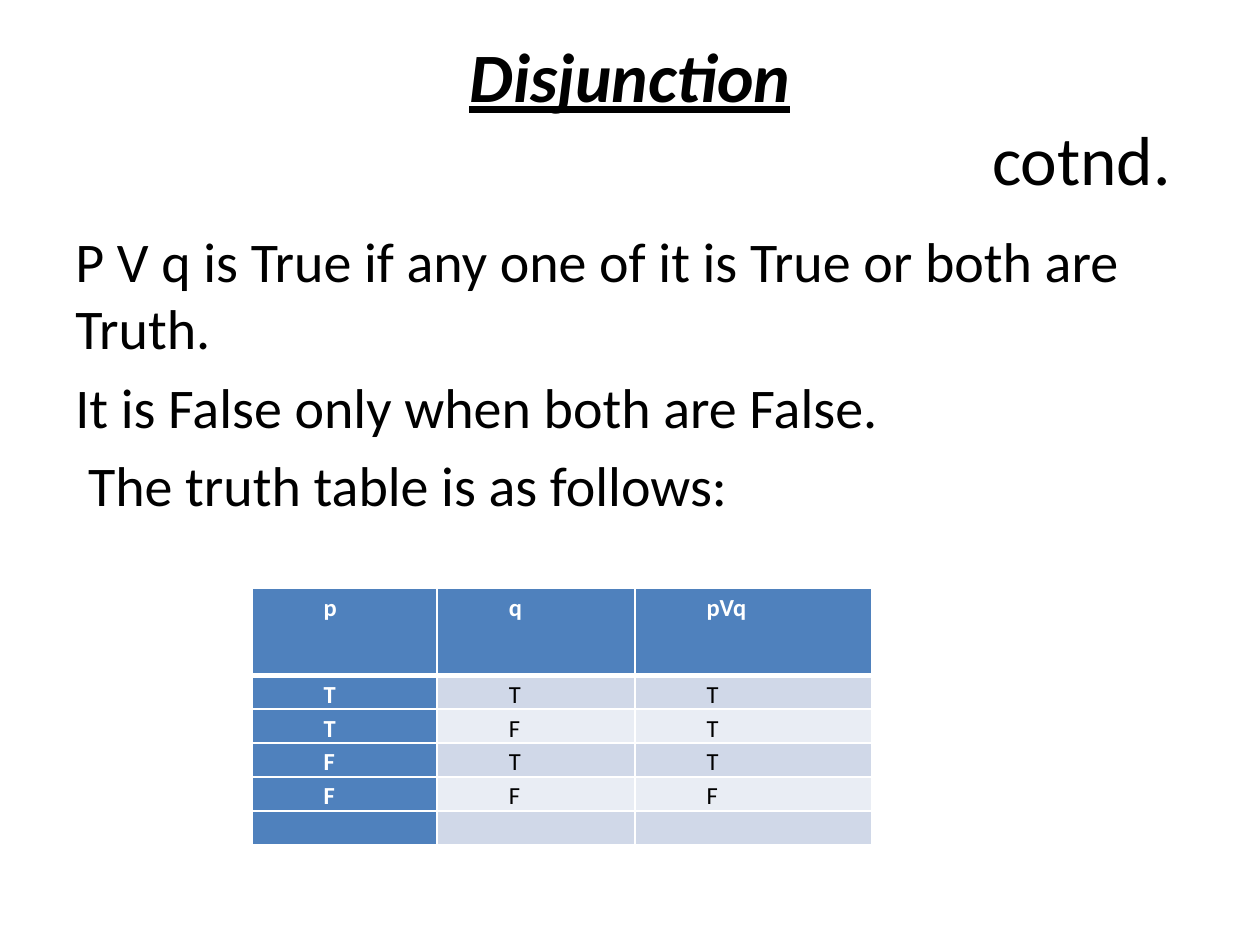
from lxml import etree
from pptx import Presentation
from pptx.dml.color import RGBColor
from pptx.enum.text import MSO_ANCHOR, PP_ALIGN
from pptx.oxml.ns import qn
from pptx.util import Pt

CENTER = PP_ALIGN.CENTER
LEFT = PP_ALIGN.LEFT
TOP = MSO_ANCHOR.TOP
MIDDLE = MSO_ANCHOR.MIDDLE

COLORS = {
    "text": "000000",
    "white": "FFFFFF",
    "header": "4F81BD",
    "odd_band": "D0D8E8",
    "even_band": "E9EDF4",
}
TRUTH_TABLE = [
    ["p", "q", "pVq"],
    ["T", "T", "T"],
    ["T", "F", "T"],
    ["F", "T", "T"],
    ["F", "F", "F"],
    ["", "", ""],
]
STATEMENTS = [
    "P V q is True if any one of it is True or both are Truth.",
    "It is False only when both are False.",
    " The truth table is as follows:",
]


def color(name):
    return RGBColor.from_string(COLORS[name])


def indent(paragraph, left):
    paragraph._p.get_or_add_pPr().set("marL", str(Pt(left)))


class SlideBuilder:
    font_name = "Calibri"
    table_size = 14

    def __init__(self, slide):
        self.slide = slide

    def style(self, font, size, color_name="text", bold=False):
        font.name = self.font_name
        font.size = Pt(size)
        font.bold = bold
        font.color.rgb = color(color_name)

    def text(self, lines, left, top, width, height, size,
             align=LEFT, anchor=TOP, space_before=0):
        """Add a text box and return its paragraphs, one per line."""
        box = self.slide.shapes.add_textbox(Pt(left), Pt(top), Pt(width), Pt(height))
        frame = box.text_frame
        frame.word_wrap = True
        frame.vertical_anchor = anchor
        frame.text = "\n".join(lines)
        for paragraph in frame.paragraphs:
            paragraph.alignment = align
            paragraph.space_before = Pt(space_before)
            self.style(paragraph.runs[0].font, size)
        return frame.paragraphs

    def border(self, cell, side, width):
        line = etree.SubElement(cell._tc.get_or_add_tcPr(), qn(f"a:ln{side}"), w=str(Pt(width)))
        fill = etree.SubElement(line, qn("a:solidFill"))
        etree.SubElement(fill, qn("a:srgbClr"), val=COLORS["white"])

    def cell(self, cell, text, fill, is_heading, top_width, bottom_width):
        cell.margin_left = cell.margin_right = Pt(5)
        cell.margin_top = cell.margin_bottom = 0
        for side, width in zip("LRTB", (1, 1, top_width, bottom_width)):
            self.border(cell, side, width)
        cell.fill.solid()
        cell.fill.fore_color.rgb = color(fill)
        paragraph = cell.text_frame.paragraphs[0]
        paragraph.text = text
        paragraph.line_spacing = 1.15
        indent(paragraph, 36)
        for run in paragraph.runs:
            self.style(run.font, self.table_size, "white" if is_heading else "text", is_heading)
        if not text:
            # An empty cell takes its line height from the end mark.
            etree.SubElement(paragraph._p, qn("a:endParaRPr"), sz=str(self.table_size * 100))

    def table(self, rows, left, top, column_widths, row_heights):
        frame = self.slide.shapes.add_table(
            len(rows), len(column_widths), Pt(left), Pt(top),
            Pt(sum(column_widths)), Pt(sum(row_heights)))
        table = frame.table
        table.first_col = True
        for column, width in zip(table.columns, column_widths):
            column.width = Pt(width)
        for row, height in zip(table.rows, row_heights):
            row.height = Pt(height)
        for i, row in enumerate(rows):
            band = "odd_band" if i % 2 else "even_band"
            for j, text in enumerate(row):
                is_heading = i == 0 or j == 0
                self.cell(table.cell(i, j), text, "header" if is_heading else band,
                          is_heading, 3 if i == 1 else 1, 3 if i == 0 else 1)


def main():
    presentation = Presentation()
    presentation.slide_width = Pt(720)
    presentation.slide_height = Pt(540)
    builder = SlideBuilder(presentation.slides.add_slide(presentation.slide_layouts[6]))

    heading, continuation = builder.text(
        ["Disjunction", "cotnd."], 36, 21.6, 648, 90, 39.6, CENTER, MIDDLE)
    heading_font = heading.runs[0].font
    heading_font.bold = heading_font.italic = heading_font.underline = True
    indent(continuation, 516)

    builder.text(STATEMENTS, 36, 126, 648, 356.4, 32, space_before=6.4)
    builder.table(TRUTH_TABLE, 144, 336.2, [105.8, 113, 135.4], [49.7] + [19.4] * 5)
    presentation.save("out.pptx")


if __name__ == "__main__":
    main()
